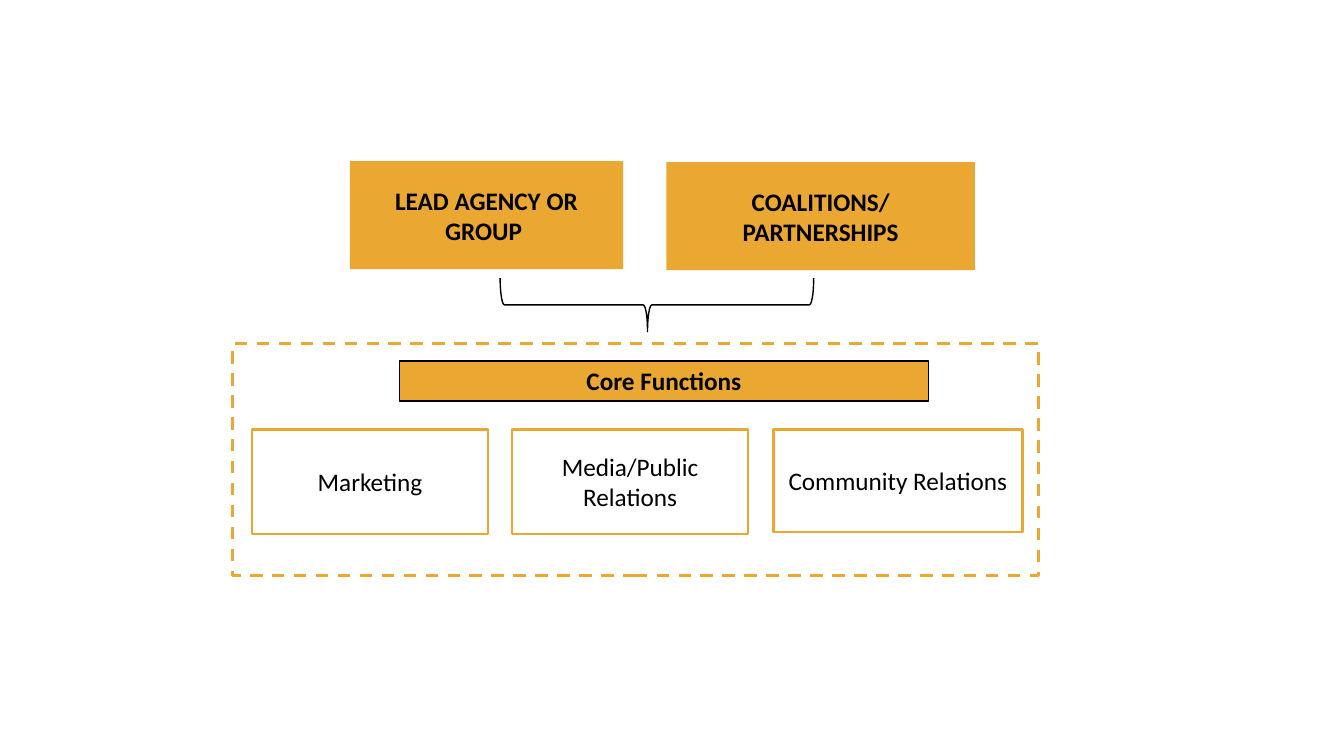
import pptx
import pptx.dml.color
import pptx.enum.dml
import pptx.enum.shapes
import pptx.enum.text
import pptx.util

PX = 9144  # EMU per px, 100 px to the inch
GOLD, BLACK, WHITE = "EAA731", "000000", "FFFFFF"
SHAPES = pptx.enum.shapes.MSO_SHAPE
ANCHORS = pptx.enum.text.MSO_ANCHOR

deck = pptx.Presentation()
deck.slide_width, deck.slide_height = 1333 * PX, 750 * PX
page = deck.slides.add_slide(deck.slide_layouts[6])


def color(value):
    return pptx.dml.color.RGBColor.from_string(value)


def add_box(text, left, top, width, height, kind=SHAPES.RECTANGLE, fill=None,
            line=None, weight=1, bold=False, anchor=ANCHORS.MIDDLE):
    box = page.shapes.add_shape(kind, left * PX, top * PX, width * PX, height * PX)
    box.shadow.inherit = False
    if fill:
        box.fill.solid()
        box.fill.fore_color.rgb = color(fill)
    else:
        box.fill.background()
    if line:
        box.line.color.rgb = color(line)
        box.line.width = pptx.util.Pt(weight)
    else:
        box.line.fill.background()
    if text:
        frame = box.text_frame
        frame.word_wrap = True
        frame.vertical_anchor = anchor
        para = frame.paragraphs[0]
        para.alignment = pptx.enum.text.PP_ALIGN.CENTER
        for number, words in enumerate(text.split("\n")):
            if number:
                para.add_line_break()
            span = para.add_run()
            span.text = words
            span.font.name = "Calibri"
            span.font.size = pptx.util.Pt(18)
            span.font.bold = bold
            span.font.color.rgb = color(BLACK)
    return box


# Leading groups
add_box("LEAD AGENCY OR GROUP ", 347, 160, 271, 107, fill=GOLD, bold=True)
add_box("COALITIONS/\nPARTNERSHIPS", 661, 161, 306, 107, fill=GOLD, bold=True)

# Dashed frame with its heading
frame_box = add_box("", 231, 341, 799, 230, line=GOLD, weight=2.25)
frame_box.line.dash_style = pptx.enum.dml.MSO_LINE.DASH
heading = add_box("Core Functions", 396, 358, 525, 40, fill=GOLD, line=BLACK,
                  bold=True, anchor=ANCHORS.TOP)
heading.text_frame.auto_size = pptx.enum.text.MSO_AUTO_SIZE.SHAPE_TO_FIT_TEXT

# Core functions
functions = [("Marketing", 250, 234, 104),
             ("Media/Public Relations", 508, 234, 104),
             ("Community Relations", 767, 247, 102)]
for name, left, width, height in functions:
    add_box(name, left, 426, width, height, fill=WHITE, line=GOLD, weight=1.75)

# Brace joining the groups to the frame
brace = add_box("", 625, 147, 53, 311, kind=SHAPES.RIGHT_BRACE, line=BLACK)
brace.rotation = 90
brace.adjustments[0] = 0.08
brace.adjustments[1] = 0.53

deck.save("out.pptx")
